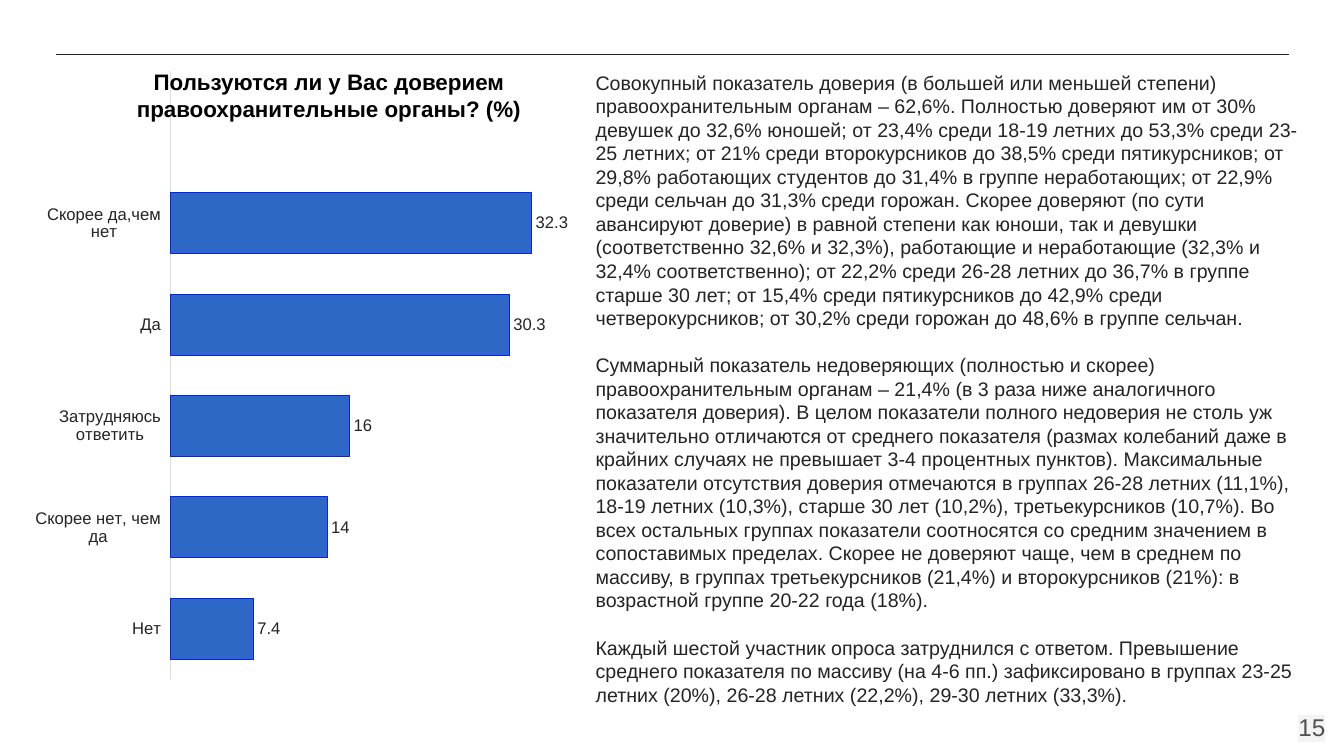
from dataclasses import dataclass

from lxml import etree
from pptx import Presentation
from pptx.chart.data import CategoryChartData
from pptx.dml.color import RGBColor
from pptx.enum.chart import XL_CHART_TYPE, XL_LABEL_POSITION, XL_TICK_LABEL_POSITION, XL_TICK_MARK
from pptx.enum.shapes import MSO_CONNECTOR
from pptx.enum.text import MSO_ANCHOR, PP_ALIGN
from pptx.oxml import parse_xml
from pptx.oxml.ns import nsdecls, qn
from pptx.util import Cm, Pt

BAR = XL_CHART_TYPE.BAR_CLUSTERED
OUTSIDE = XL_LABEL_POSITION.OUTSIDE_END
LABELS_LOW = XL_TICK_LABEL_POSITION.LOW
NO_TICK = XL_TICK_MARK.NONE
STRAIGHT = MSO_CONNECTOR.STRAIGHT
TOP, MIDDLE = MSO_ANCHOR.TOP, MSO_ANCHOR.MIDDLE
LEFT, CENTER, RIGHT = PP_ALIGN.LEFT, PP_ALIGN.CENTER, PP_ALIGN.RIGHT


@dataclass(frozen=True)
class Theme:
    font: str = "Arial"
    ink: str = "242424"
    black: str = "000000"
    number: str = "505050"
    highlight: str = "F3F3F3"
    axis: str = "DEDEDE"
    bar: str = "2D68C7"
    bar_line: str = "0B20EA"
    heading_size: float = 16
    body_size: float = 14
    number_size: float = 17.3
    label_size: float = 12
    body_leading: float = 16.8
    line_width: float = 0.75


@dataclass(frozen=True)
class Box:
    left: float
    top: float
    width: float
    height: float

    def emu(self) -> tuple:
        return Cm(self.left), Cm(self.top), Cm(self.width), Cm(self.height)


@dataclass(frozen=True)
class TextBlock:
    box: Box
    paragraphs: tuple
    size: float
    color: str
    align: PP_ALIGN = LEFT
    anchor: MSO_ANCHOR = TOP
    inset: float = 0.33
    bold: bool = False
    leading: float | None = None
    highlight: str | None = None


@dataclass(frozen=True)
class Answer:
    label: str
    percent: float | None


THEME = Theme()

ANSWERS = (
    Answer("Нет", 7.4),
    Answer("Скорее нет, чем да", 14),
    Answer("Затрудняюсь ответить", 16),
    Answer("Да", 30.3),
    Answer("Скорее да,чем нет", 32.3),
    Answer("", None),
)

COMMENTARY = (
    "Совокупный показатель доверия (в большей или меньшей степени) правоохранительным органам – 62,6%. "
    "Полностью доверяют им от 30% девушек до 32,6% юношей; от 23,4% среди 18-19 летних до 53,3% среди "
    "23-25 летних; от 21% среди второкурсников до 38,5% среди пятикурсников; от 29,8% работающих студентов "
    "до 31,4% в группе неработающих; от 22,9% среди сельчан до 31,3% среди горожан. Скорее доверяют (по сути "
    "авансируют доверие) в равной степени как юноши, так и девушки (соответственно 32,6% и 32,3%), работающие "
    "и неработающие (32,3% и 32,4% соответственно); от 22,2% среди 26-28 летних до 36,7% в группе старше 30 лет; "
    "от 15,4% среди пятикурсников до 42,9% среди четверокурсников; от 30,2% среди горожан до 48,6% в группе сельчан.",
    "Суммарный показатель недоверяющих (полностью и скорее) правоохранительным органам – 21,4% (в 3 раза ниже "
    "аналогичного показателя доверия). В целом показатели полного недоверия не столь уж значительно отличаются "
    "от среднего показателя (размах колебаний даже в крайних случаях не превышает 3-4 процентных пунктов). "
    "Максимальные показатели отсутствия доверия отмечаются в группах 26-28 летних (11,1%), 18-19 летних (10,3%), "
    "старше 30 лет (10,2%), третьекурсников (10,7%). Во всех остальных группах показатели соотносятся со средним "
    "значением в сопоставимых пределах. Скорее не доверяют чаще, чем в среднем по массиву, в группах "
    "третьекурсников (21,4%) и второкурсников (21%): в возрастной группе 20-22 года (18%).",
    "Каждый шестой участник опроса затруднился с ответом. Превышение среднего показателя по массиву (на 4-6 пп.) "
    "зафиксировано в группах 23-25 летних (20%), 26-28 летних (22,2%), 29-30 летних (33,3%).",
)

TEXT_BLOCKS = (
    TextBlock(Box(31.7, 17.6, 2.03, 1.45), ("15",), THEME.number_size, THEME.number,
              align=RIGHT, anchor=MIDDLE, highlight=THEME.highlight),
    TextBlock(Box(14.68, 1.45, 18.67, 16.48), COMMENTARY, THEME.body_size, THEME.ink,
              leading=THEME.body_leading),
    TextBlock(Box(1.9, 1.6, 12.78, 1.65), ("Пользуются ли у Вас доверием правоохранительные органы? (%)",),
              THEME.heading_size, THEME.black, align=CENTER, inset=0.13, bold=True),
)


def rgb(color: str) -> RGBColor:
    return RGBColor.from_string(color)


def style_font(font, size: float, color: str, bold: bool = False) -> None:
    font.name, font.size, font.bold = THEME.font, Pt(size), bold
    font.color.rgb = rgb(color)


def style_line(line, color: str) -> None:
    line.color.rgb = rgb(color)
    line.width = Pt(THEME.line_width)


def add_rule(slide, left: float, right: float, y: float) -> None:
    sp = slide.shapes.add_connector(STRAIGHT, Cm(left), Cm(y), Cm(right), Cm(y))
    style_line(sp.line, THEME.ink)
    etree.SubElement(sp._element.spPr, qn("a:effectLst"))


def add_text(slide, block: TextBlock) -> None:
    tf = slide.shapes.add_textbox(*block.box.emu()).text_frame
    tf.word_wrap = True
    tf.vertical_anchor = block.anchor
    tf.margin_left = tf.margin_right = tf.margin_top = tf.margin_bottom = Cm(block.inset)
    for i, text in enumerate(block.paragraphs):
        p = tf.add_paragraph() if i else tf.paragraphs[0]
        p.alignment = block.align
        if block.leading:
            p.line_spacing = Pt(block.leading)
            p.space_before = Pt(block.leading if i else 0)
        r = p.add_run()
        r.text = text
        style_font(r.font, block.size, block.color, block.bold)
        if block.highlight:
            fill = r._r.rPr.find(qn("a:solidFill"))
            fill.addnext(parse_xml(
                f'<a:highlight {nsdecls("a")}><a:srgbClr val="{block.highlight}"/></a:highlight>'))


def set_plot_area(chart, x: float, y: float, w: float, h: float) -> None:
    area = chart._chartSpace.chart.plotArea
    for layout in area.findall(qn("c:layout")):
        area.remove(layout)
    sizes = "".join(f'<c:{name} val="{value}"/>' for name, value in zip("xywh", (x, y, w, h)))
    area.insert(0, parse_xml(
        f'<c:layout {nsdecls("c")}><c:manualLayout><c:layoutTarget val="inner"/>'
        f'<c:xMode val="edge"/><c:yMode val="edge"/>{sizes}</c:manualLayout></c:layout>'))


def add_trust_chart(slide, box: Box, answers: tuple) -> None:
    data = CategoryChartData()
    data.categories = [a.label for a in answers]
    data.add_series("Доверие", [a.percent for a in answers])
    chart = slide.shapes.add_chart(BAR, *box.emu(), data).chart
    chart.has_title = chart.has_legend = False
    style_font(chart.font, THEME.label_size, THEME.ink)
    set_plot_area(chart, 0.24, 0, 0.72, 0.97)

    cat, val = chart.category_axis, chart.value_axis
    cat.major_tick_mark = cat.minor_tick_mark = NO_TICK
    cat.tick_label_position = LABELS_LOW
    style_font(cat.tick_labels.font, THEME.label_size, THEME.ink)
    style_line(cat.format.line, THEME.axis)
    val.minimum_scale, val.maximum_scale = 0, 35
    val.has_major_gridlines = val.visible = False

    plot = chart.plots[0]
    plot.gap_width, plot.vary_by_categories = 66, False
    bars = plot.series[0]
    bars.format.fill.solid()
    bars.format.fill.fore_color.rgb = rgb(THEME.bar)
    style_line(bars.format.line, THEME.bar_line)
    labels = bars.data_labels
    labels.show_value = True
    labels.position = OUTSIDE
    style_font(labels.font, THEME.label_size, THEME.ink)


def main() -> None:
    prs = Presentation()
    prs.slide_width, prs.slide_height = Cm(33.87), Cm(19.05)
    slide = prs.slides.add_slide(prs.slide_layouts[6])
    add_rule(slide, 1.4, 32.49, 1.37)
    add_trust_chart(slide, Box(0.89, 1.78, 13.82, 15.82), ANSWERS)
    for block in TEXT_BLOCKS:
        add_text(slide, block)
    prs.save("out.pptx")


if __name__ == "__main__":
    main()
